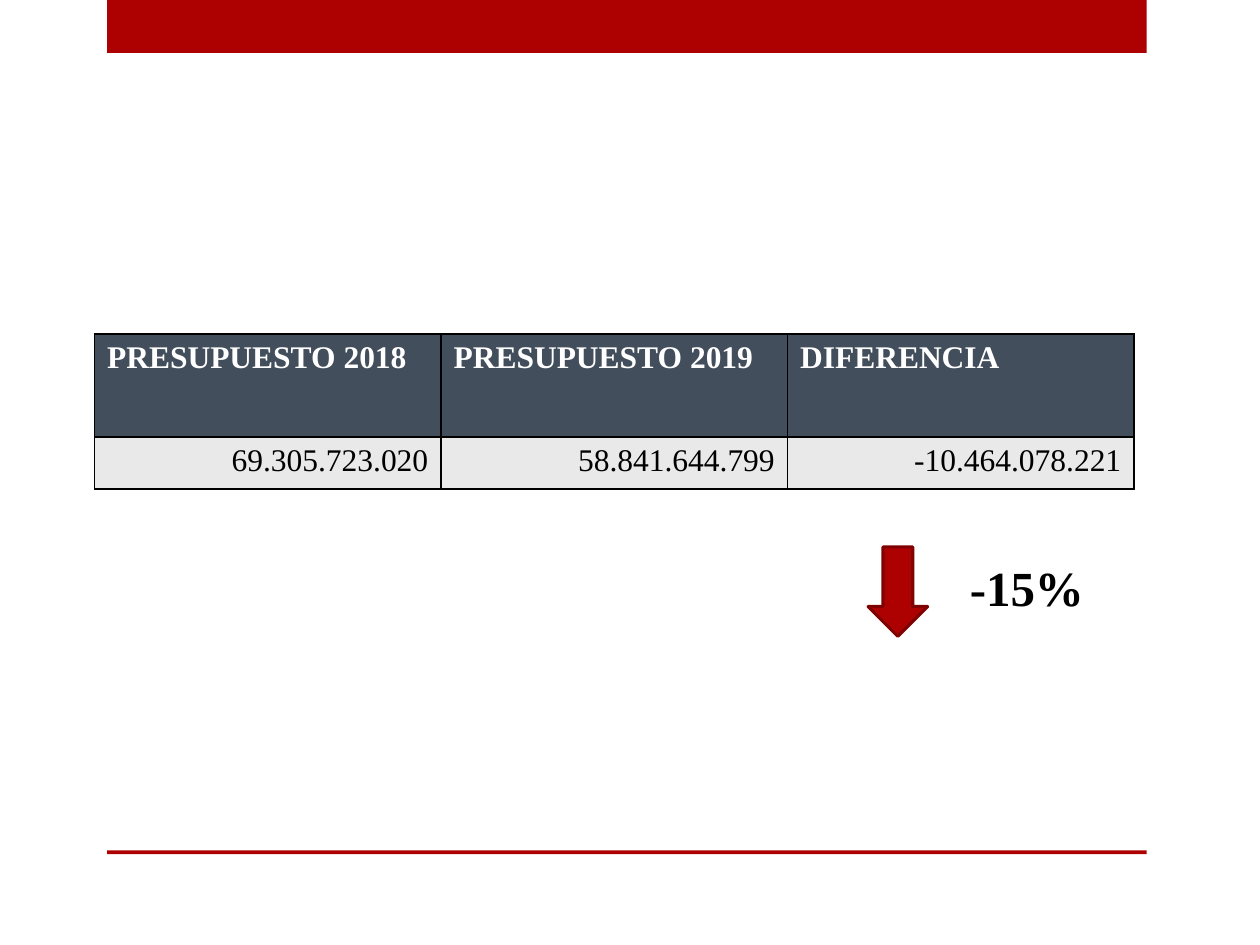
import pptx
import pptx.util
import pptx.dml.color
import pptx.enum.shapes
import pptx.enum.text
import pptx.oxml
from lxml import etree

COLORS = {"red": "AD0101", "dark_red": "800101", "slate": "424E5B",
          "pale": "E9E9EA", "white": "FFFFFF", "black": "000000"}
FONT = "Times New Roman"
SHAPE = pptx.enum.shapes.MSO_SHAPE
HEADERS = ["PRESUPUESTO 2018", "PRESUPUESTO 2019", "DIFERENCIA"]
AMOUNTS = ["69.305.723.020", "58.841.644.799", "-10.464.078.221"]


def inches(*values):
    return [pptx.util.Inches(v) for v in values]


def rgb(name):
    return pptx.dml.color.RGBColor.from_string(COLORS[name])


def style_text(p, size, color, bold):
    for r in p.runs:
        r.font.name = FONT
        r.font.size = pptx.util.Pt(size)
        r.font.bold = bold
        r.font.color.rgb = rgb(color)


def add_block(slide, kind, box, line=None):
    s = slide.shapes.add_shape(kind, *inches(*box))
    s.shadow.inherit = False
    s.fill.solid()
    s.fill.fore_color.rgb = rgb("red")
    if line:
        s.line.color.rgb = rgb(line)
        s.line.width = pptx.util.Pt(1.75)
    else:
        s.line.fill.background()


def add_frame(slide, box):
    x, y, w, h = box
    add_block(slide, SHAPE.RECTANGLE, (x, y, w, 0.056 * h))
    add_block(slide, SHAPE.RECTANGLE, (x, y + 0.9 * h, w, 0.004 * h))


def add_borders(cell):
    tc_pr = cell._tc.get_or_add_tcPr()
    for i, side in enumerate(("lnL", "lnR", "lnT", "lnB")):
        ln = etree.Element(pptx.oxml.ns.qn(f"a:{side}"), w=str(pptx.util.Pt(1)))
        fill = etree.SubElement(ln, pptx.oxml.ns.qn("a:solidFill"))
        etree.SubElement(fill, pptx.oxml.ns.qn("a:srgbClr"), val=COLORS["black"])
        tc_pr.insert(i, ln)


def fill_row(table, row, texts, fill, color, bold, align):
    for col, text in enumerate(texts):
        cell = table.cell(row, col)
        cell.text_frame.text = text
        p = cell.text_frame.paragraphs[0]
        p.alignment = align
        style_text(p, 18, color, bold)
        cell.fill.solid()
        cell.fill.fore_color.rgb = rgb(fill)
        add_borders(cell)


def add_budget_table(slide, box):
    table = slide.shapes.add_table(2, len(HEADERS), *inches(*box)).table
    for row, share in zip(table.rows, (2 / 3, 1 / 3)):
        row.height = pptx.util.Inches(box[3] * share)
    align = pptx.enum.text.PP_ALIGN
    fill_row(table, 0, HEADERS, "slate", "white", True, align.LEFT)
    fill_row(table, 1, AMOUNTS, "pale", "black", False, align.RIGHT)


def add_change(slide, box):
    x, y, w, h = box
    tb = slide.shapes.add_textbox(*inches(x + 0.375 * w, y + 0.05 * h, 0.625 * w, 0.8 * h))
    tf = tb.text_frame
    tf.word_wrap = True
    tf.auto_size = pptx.enum.text.MSO_AUTO_SIZE.SHAPE_TO_FIT_TEXT
    tf.text = "-15%"
    style_text(tf.paragraphs[0], 28, "black", True)
    add_block(slide, SHAPE.DOWN_ARROW, (x, y, 0.25 * w, h), "dark_red")


def main():
    prs = pptx.Presentation()
    prs.slide_width, prs.slide_height = inches(10, 7.5)
    slide = prs.slides.add_slide(prs.slide_layouts[6])
    add_frame(slide, (0.85, 0, 8.25, 7.5))
    add_budget_table(slide, (0.75, 2.65, 8.25, 1.23))
    add_change(slide, (6.89, 4.34, 1.89, 0.71))
    prs.save("out.pptx")


if __name__ == "__main__":
    main()
